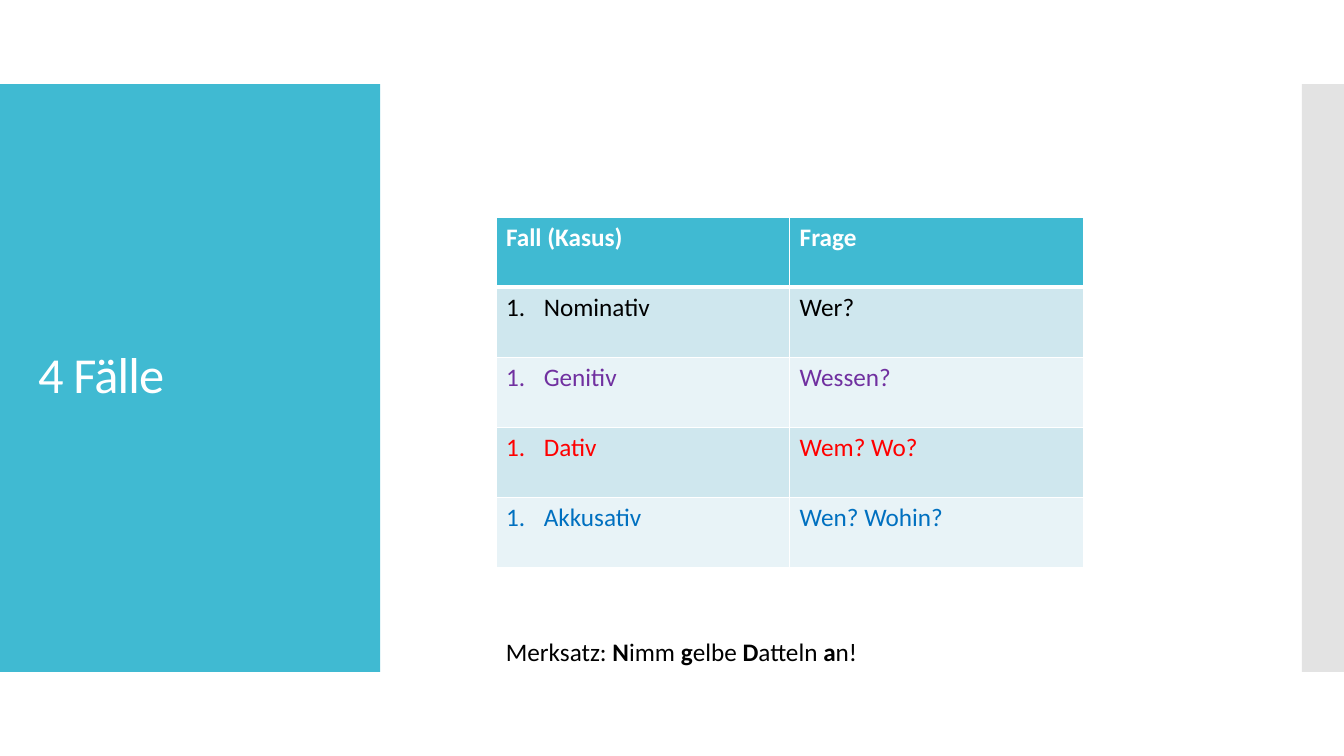
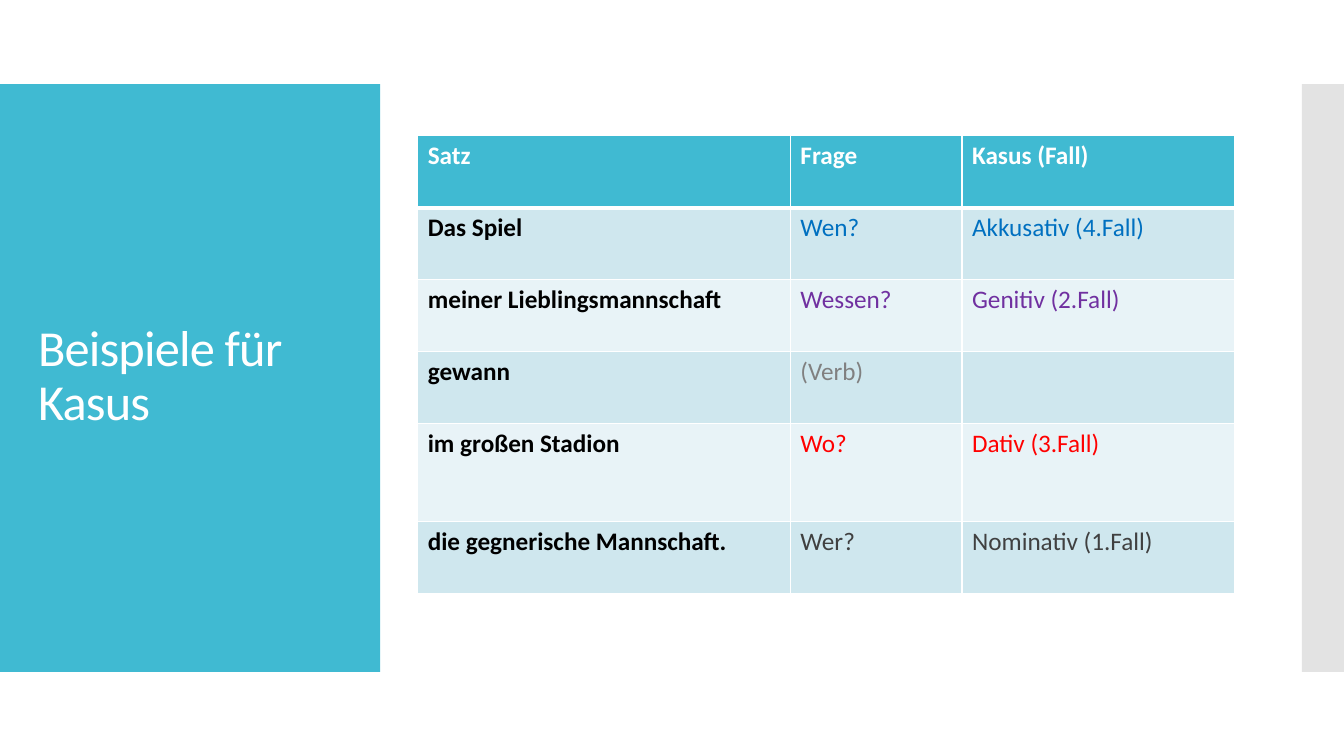
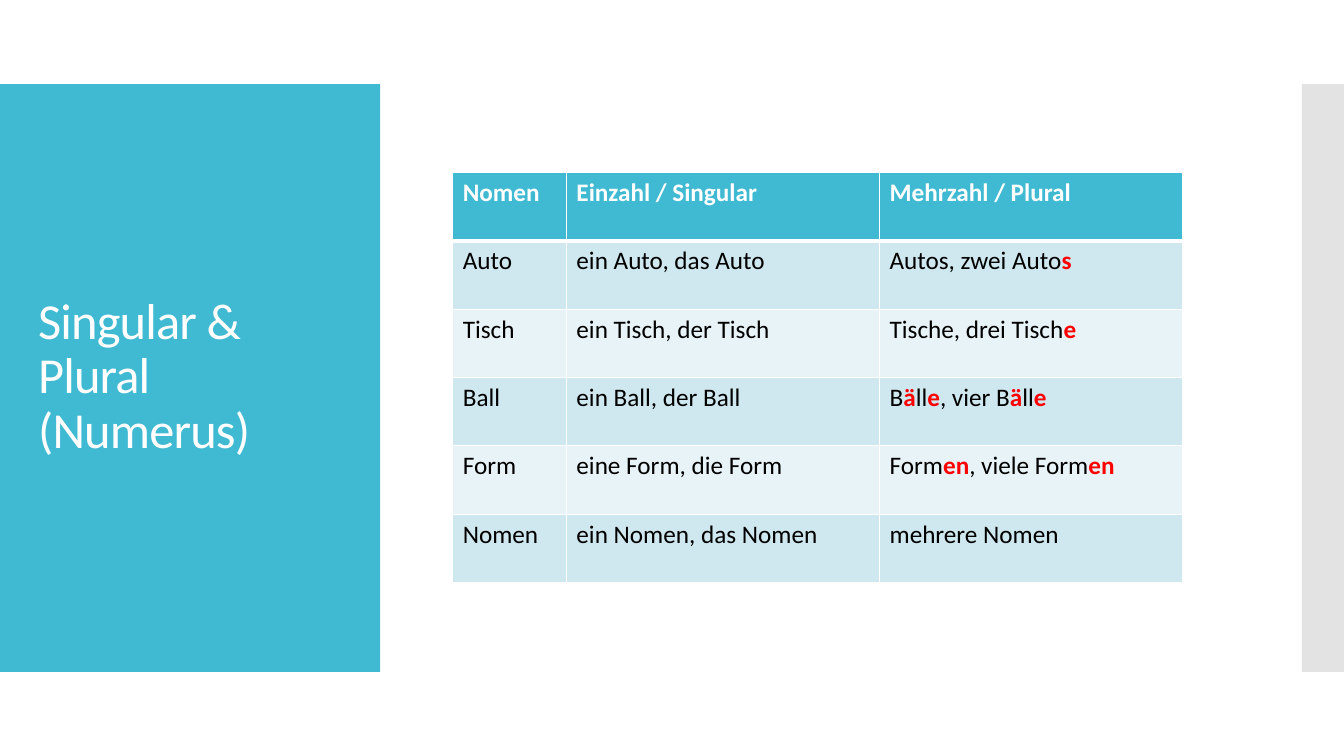
from pptx import Presentation
from pptx.dml.color import RGBColor
from pptx.enum.shapes import MSO_SHAPE
from pptx.enum.text import MSO_ANCHOR, MSO_AUTO_SIZE, PP_ALIGN
from pptx.oxml.ns import qn
from pptx.util import Pt
from lxml.etree import Element, SubElement

COLORS = {
    "white": "FFFFFF", "black": "000000", "teal": "40BAD2", "gray": "C8C8C8",
    "odd": "CFE7EE", "even": "E8F3F7", "purple": "7030A0", "red": "FF0000",
    "blue": "0070C0", "verb": "808080", "dark": "404040",
}
FONT = "Calibri"


def rgb(name):
    return RGBColor.from_string(COLORS[name])


class Deck:
    def __init__(self):
        self.prs = Presentation()
        self.prs.slide_width = Pt(960)
        self.prs.slide_height = Pt(540)
        self.s = None

    def slide(self, title):
        self.s = self.prs.slides.add_slide(self.prs.slide_layouts[5])
        self.band(0, 271.5, "teal")
        self.band(930, 30, "gray", 50)
        self.title(title)

    def band(self, left, width, color, opacity=100):
        sp = self.s.shapes.add_shape(
            MSO_SHAPE.RECTANGLE, Pt(left), Pt(60), Pt(width), Pt(420))
        sp.shadow.inherit = False
        sp.fill.solid()
        sp.fill.fore_color.rgb = rgb(color)
        sp.line.fill.background()
        if opacity < 100:
            clr = sp.element.spPr.find(qn("a:solidFill"))[0]
            SubElement(clr, qn("a:alpha"), val=str(opacity * 1000))

    def title(self, text):
        sp = self.s.shapes.title
        sp.element.getparent().append(sp.element)
        sp.left, sp.top, sp.width, sp.height = Pt(20), Pt(88.5), Pt(232), Pt(362)
        tf = sp.text_frame
        tf.text = text
        tf.word_wrap = True
        tf.auto_size = MSO_AUTO_SIZE.NONE
        tf.vertical_anchor = MSO_ANCHOR.MIDDLE
        p = tf.paragraphs[0]
        p.alignment = PP_ALIGN.LEFT
        p.line_spacing = 0.9
        self.font(p, 36, "white", False)
        for r in p.runs:
            r.font._element.set("spc", "-60") if hasattr(r.font, "_element") \
                else r._r.get_or_add_rPr().set("spc", "-60")

    def font(self, p, size, color, bold):
        p.font.name = FONT
        p.font.size = Pt(size)
        p.font.bold = bold
        p.font.color.rgb = rgb(color)

    def rich(self, p, text, color="black", bold=False, accent=None):
        self.font(p, 18, color, bold)
        for i, part in enumerate(text.split("*")):
            if not part:
                continue
            r = p.add_run()
            r.text = part
            if i % 2:
                r.font.bold = True
                if accent:
                    r.font.color.rgb = rgb(accent)

    def note(self, left, top, width, height, text):
        sp = self.s.shapes.add_textbox(Pt(left), Pt(top), Pt(width), Pt(height))
        tf = sp.text_frame
        tf.word_wrap = False
        tf.auto_size = MSO_AUTO_SIZE.SHAPE_TO_FIT_TEXT
        self.rich(tf.paragraphs[0], text)

    def number(self, p):
        pPr = p._p.get_or_add_pPr()
        pPr.set("marL", str(Pt(27)))
        pPr.set("indent", str(-Pt(27)))
        pPr.insert(0, Element(qn("a:buAutoNum"), type="arabicPeriod"))

    def borders(self, cell, top, bottom):
        tcPr = cell._tc.get_or_add_tcPr()
        sides = (("L", 1), ("R", 1), ("T", top), ("B", bottom))
        for i, (side, width) in enumerate(sides):
            ln = Element(qn(f"a:ln{side}"), w=str(Pt(width)))
            fill = SubElement(ln, qn("a:solidFill"))
            SubElement(fill, qn("a:srgbClr"), val=COLORS["white"])
            tcPr.insert(i, ln)

    def table(self, left, top, widths, heights, header, rows,
              numbered=False, bold_first=False):
        table = self.s.shapes.add_table(
            len(heights), len(widths), Pt(left), Pt(top),
            Pt(sum(widths)), Pt(sum(heights))).table
        for col, width in zip(table.columns, widths):
            col.width = Pt(width)
        for row, height in zip(table.rows, heights):
            row.height = Pt(height)
        for i, (color, texts) in enumerate([("white", header), *rows]):
            for j, text in enumerate(texts):
                cell = table.cell(i, j)
                cell.fill.solid()
                cell.fill.fore_color.rgb = rgb(
                    "teal" if i == 0 else "odd" if i % 2 else "even")
                self.borders(cell, 3 if i == 1 else 1, 3 if i == 0 else 1)
                p = cell.text_frame.paragraphs[0]
                strong = bold_first and i > 0 and j == 0
                self.rich(p, text, "black" if strong else color,
                          i == 0 or strong, "red")
                if numbered and i > 0 and j == 0:
                    self.number(p)


def main():
    deck = Deck()

    deck.slide("4 Fälle")
    deck.table(354.25, 155, [209.8] * 2, [50.15] * 5, ("Fall (Kasus)", "Frage"), [
        ("black", ("Nominativ", "Wer?")),
        ("purple", ("Genitiv", "Wessen?")),
        ("red", ("Dativ", "Wem? Wo?")),
        ("blue", ("Akkusativ", "Wen? Wohin?")),
    ], numbered=True)
    deck.note(354.25, 451, 281, 29, "Merksatz: *N*imm *g*elbe *D*atteln *a*n!")

    deck.slide("Beispiele für Kasus")
    deck.table(298.4, 97, [266.2, 122.6, 194.4], [51.4] * 4 + [70.2, 51.4],
               ("Satz", "Frage", "Kasus (Fall)"), [
        ("blue", ("Das Spiel", "Wen?", "Akkusativ (4.Fall)")),
        ("purple", ("meiner Lieblingsmannschaft", "Wessen?", "Genitiv (2.Fall)")),
        ("verb", ("gewann", "(Verb)", "")),
        ("red", ("im großen Stadion", "Wo?", "Dativ (3.Fall)")),
        ("dark", ("die gegnerische Mannschaft.", "Wer?", "Nominativ (1.Fall)")),
    ], bold_first=True)

    deck.slide("Singular & Plural\v(Numerus)")
    deck.table(323.4, 123.3, [81.2, 223.7, 216.2], [48.8] * 6,
               ("Nomen", "Einzahl / Singular", "Mehrzahl / Plural"), [
        ("black", ("Auto", "ein Auto, das Auto", "Autos, zwei Auto*s*")),
        ("black", ("Tisch", "ein Tisch, der Tisch", "Tische, drei Tisch*e*")),
        ("black", ("Ball", "ein Ball, der Ball", "B*ä*ll*e*, vier B*ä*ll*e*")),
        ("black", ("Form", "eine Form, die Form", "Form*en*, viele Form*en*")),
        ("black", ("Nomen", "ein Nomen, das Nomen", "mehrere Nomen")),
    ])

    deck.prs.save("out.pptx")


if __name__ == "__main__":
    main()
